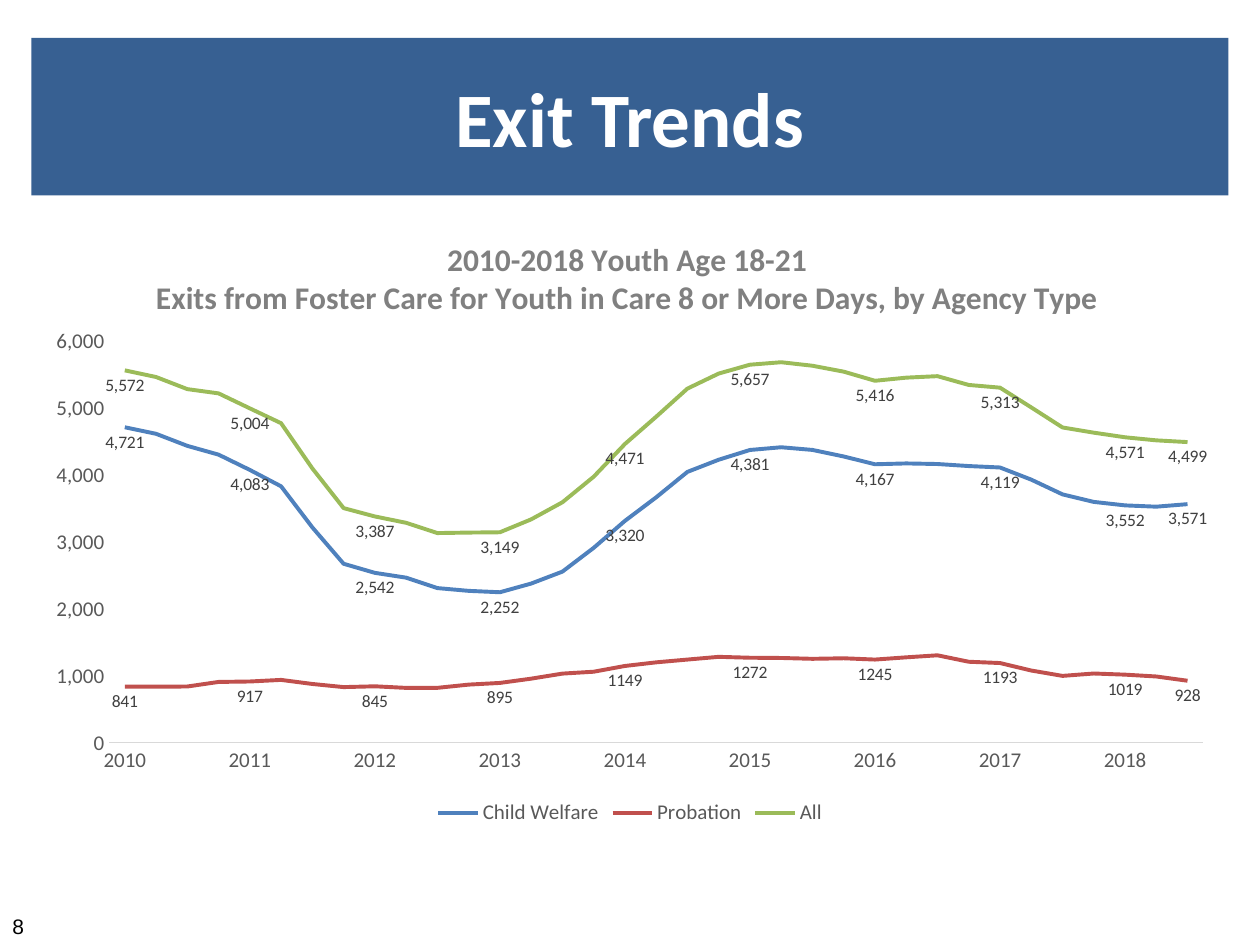
import pptx
import pptx.chart.data
import pptx.dml.color
import pptx.enum.chart
import pptx.enum.text
import pptx.enum.shapes
import pptx.oxml
import pptx.oxml.ns
import pptx.util

Pt = pptx.util.Pt
ALIGN = pptx.enum.text.PP_ALIGN
COLORS = {
    "banner": "376092", "white": "FFFFFF", "black": "000000",
    "heading": "808080", "axis_text": "595959", "axis_line": "D9D9D9",
    "label": "404040", "Child Welfare": "4F81BD", "Probation": "C0504D",
    "All": "9BBB59",
}
QUARTERS = 35
LABELED = [*range(0, QUARTERS, 4), QUARTERS - 1]
QUARTER_LABELS = [str(2010 + q // 4) if q % 4 == 0 else "" for q in range(QUARTERS)]
EXITS = {
    "Child Welfare": ("#,##0", [
        4721, 4623, 4443, 4311, 4083, 3838, 3223, 2678, 2542, 2470, 2314, 2273,
        2252, 2382, 2561, 2916, 3320, 3672, 4053, 4235, 4381, 4422, 4382, 4284,
        4167, 4180, 4171, 4141, 4119, 3937, 3717, 3604, 3552, 3533, 3571]),
    "Probation": ("General", [
        841, 839, 842, 910, 917, 941, 880, 833, 845, 821, 822, 870,
        895, 959, 1035, 1063, 1149, 1203, 1245, 1286, 1272, 1269, 1256, 1264,
        1245, 1278, 1309, 1212, 1193, 1081, 1001, 1036, 1019, 992, 928]),
    "All": ("#,##0", [
        5572, 5473, 5292, 5228, 5004, 4782, 4106, 3511, 3387, 3291, 3137, 3145,
        3149, 3343, 3599, 3981, 4471, 4878, 5299, 5524, 5657, 5694, 5641, 5553,
        5416, 5463, 5485, 5354, 5313, 5018, 4718, 4640, 4571, 4525, 4499]),
}


def rgb(name):
    """Return the named palette colour."""
    return pptx.dml.color.RGBColor.from_string(COLORS[name])


def style_font(font, size, color, bold=False, face="Calibri"):
    """Set size, colour, weight and typeface of a font."""
    font.size, font.bold, font.name = Pt(size), bold, face
    font.color.rgb = rgb(color)


def write(frame, text, align=ALIGN.LEFT, **style):
    """Fill a text frame with one paragraph per line of text."""
    for index, line in enumerate(text.split("\n")):
        paragraph = frame.paragraphs[0] if index == 0 else frame.add_paragraph()
        paragraph.alignment = align
        run = paragraph.add_run()
        run.text = line
        style_font(run.font, **style)


def manual_layout(target=None, **fractions):
    """Return a chart layout element with edge-based positions."""
    sides = {"layoutTarget": target} if target else {}
    sides |= {"xMode": "edge", "yMode": "edge"} | fractions
    inner = "".join(f'<c:{tag} val="{value}"/>' for tag, value in sides.items())
    return pptx.oxml.parse_xml(
        f'<c:layout {pptx.oxml.ns.nsdecls("c")}>'
        f"<c:manualLayout>{inner}</c:manualLayout></c:layout>")


def place_layout(parent, layout, index):
    """Replace the layout of a chart part."""
    for old in parent.findall(pptx.oxml.ns.qn("c:layout")):
        parent.remove(old)
    parent.insert(index, layout)


class Deck:
    """Holds the presentation and the current slide."""

    def __init__(self, width, height):
        """Start a presentation with one blank slide."""
        self.deck = pptx.Presentation()
        self.deck.slide_width, self.deck.slide_height = Pt(width), Pt(height)
        self.slide = self.deck.slides.add_slide(self.deck.slide_layouts[6])

    def banner(self, text, box, fill, **style):
        """Add a filled rectangle with a centred heading."""
        banner = self.slide.shapes.add_shape(
            pptx.enum.shapes.MSO_SHAPE.RECTANGLE, *map(Pt, box))
        banner.shadow.inherit = False
        banner.fill.solid()
        banner.fill.fore_color.rgb = rgb(fill)
        banner.line.fill.background()
        banner.text_frame.vertical_anchor = pptx.enum.text.MSO_ANCHOR.MIDDLE
        write(banner.text_frame, text, align=ALIGN.CENTER, **style)

    def text(self, text, box, **style):
        """Add an unwrapped text box."""
        frame = self.slide.shapes.add_textbox(*map(Pt, box)).text_frame
        frame.word_wrap = False
        write(frame, text, **style)

    def line_chart(self, heading, box, categories, series):
        """Add a line chart with labels on the chosen points."""
        data = pptx.chart.data.CategoryChartData()
        data.categories = categories
        for name, (number_format, values) in series.items():
            data.add_series(name, values, number_format)
        chart = self.slide.shapes.add_chart(
            pptx.enum.chart.XL_CHART_TYPE.LINE, *map(Pt, box), data).chart
        style_font(chart.font, 10, "black")
        chart.has_title = True
        write(chart.chart_title.text_frame, heading, align=ALIGN.CENTER,
              size=18, color="heading", bold=True)
        chart.chart_title.include_in_layout = False
        chart.has_legend = True
        chart.legend.position = pptx.enum.chart.XL_LEGEND_POSITION.BOTTOM
        chart.legend.include_in_layout = False
        style_font(chart.legend.font, 12, "axis_text")
        self.style_axes(chart)
        for line in chart.plots[0].series:
            self.style_series(line)
        title = chart._chartSpace.chart.find(pptx.oxml.ns.qn("c:title"))
        place_layout(title, manual_layout(x=0.1, y=0.04), 1)
        place_layout(chart._chartSpace.chart.plotArea,
                     manual_layout("inner", x=0.064, y=0.212, w=0.916, h=0.647), 0)

    def style_axes(self, chart):
        """Set scales, lines and labels of both axes."""
        years, counts = chart.category_axis, chart.value_axis
        for axis in (years, counts):
            axis.major_tick_mark = pptx.enum.chart.XL_TICK_MARK.NONE
            axis.minor_tick_mark = pptx.enum.chart.XL_TICK_MARK.NONE
            axis.has_major_gridlines = False
            style_font(axis.tick_labels.font, 12, "axis_text")
        for body in chart._chartSpace.xpath(".//c:catAx/c:txPr/a:bodyPr"):
            body.set("rot", "-60000000")
            body.set("vert", "horz")
        years.format.line.color.rgb = rgb("axis_line")
        years.format.line.width = Pt(0.75)
        counts.format.line.fill.background()
        counts.minimum_scale, counts.maximum_scale, counts.major_unit = 0, 6000, 1000
        counts.tick_labels.number_format = "#,##0"
        counts.tick_labels.number_format_is_linked = False

    def style_series(self, line):
        """Colour one series and label its marked quarters."""
        line.smooth = False
        line.marker.style = pptx.enum.chart.XL_MARKER_STYLE.NONE
        line.format.line.color.rgb = rgb(line.name)
        line.format.line.width = Pt(2.25)
        for quarter in LABELED:
            label = line.points[quarter].data_label
            style_font(label.font, 10, "label")
            label.position = pptx.enum.chart.XL_LABEL_POSITION.BELOW


def main():
    """Build the exit trends slide."""
    trends = Deck(720, 540)
    trends.banner("Exit Trends", (18, 21.6, 684, 90), "banner",
                  size=44, color="white", bold=True)
    trends.line_chart(
        "2010-2018 Youth Age 18-21\n"
        "Exits from Foster Care for Youth in Care 8 or More Days, by Agency Type",
        (18.72, 120.24, 682.56, 354.24), QUARTER_LABELS, EXITS)
    trends.text("8", (0, 518.4, 20.88, 21.6), size=12, color="black", face="Arial")
    trends.deck.save("out.pptx")


if __name__ == "__main__":
    main()
